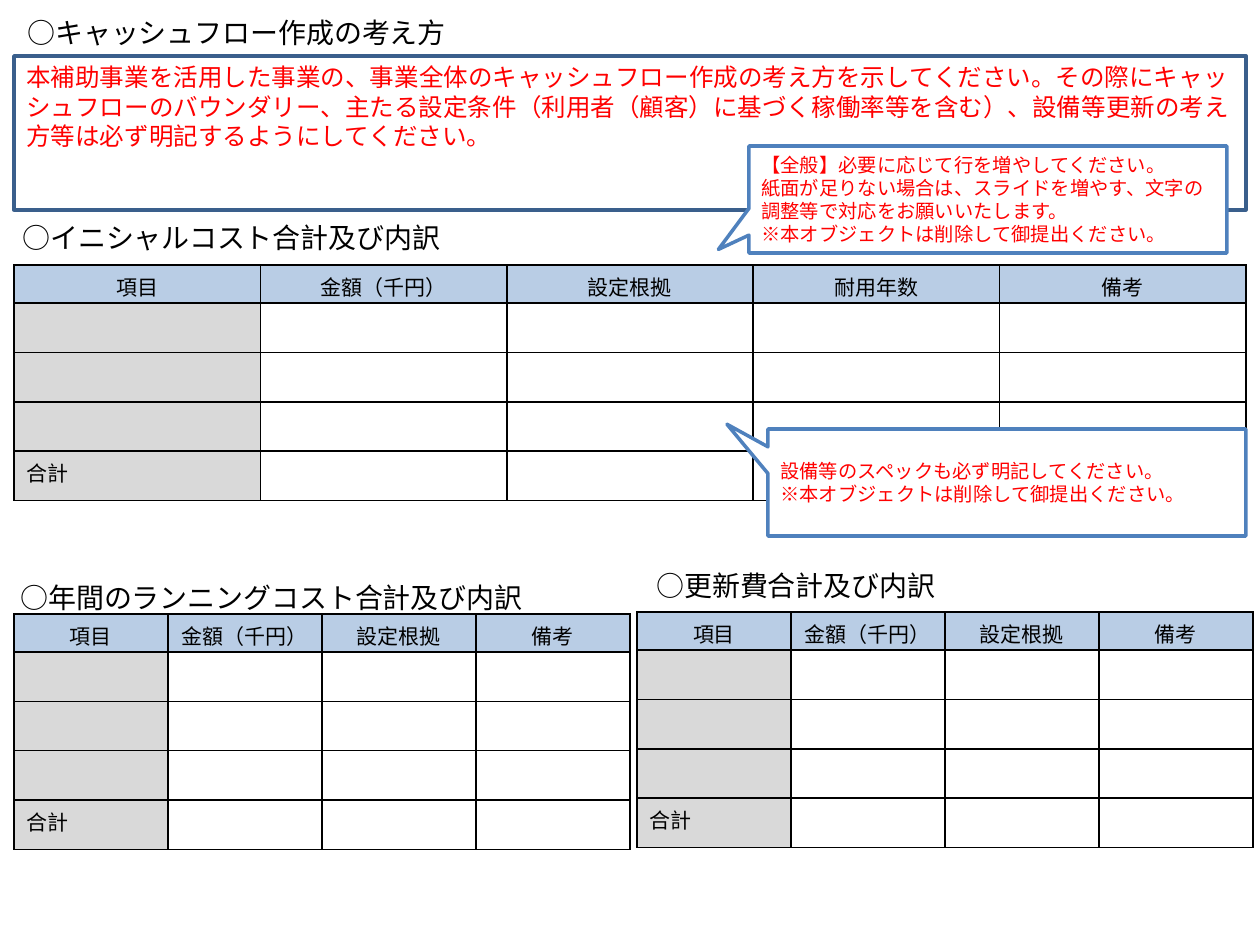
import pptx
import pptx.util
import pptx.dml.color
import pptx.enum.shapes
import pptx.enum.text
import pptx.oxml.ns
import lxml.etree

SCALE = 914400 // 126
CJK = "Noto Sans CJK JP"
BLACK, RED, WHITE = "000000", "FF0000", "FFFFFF"
HEADER_FILL, ITEM_FILL = "B9CDE5", "D9D9D9"
SHAPES = pptx.enum.shapes.MSO_SHAPE
ANCHOR = pptx.enum.text.MSO_ANCHOR
ALIGN = pptx.enum.text.PP_ALIGN


def px(value):
    return pptx.util.Emu(round(value * 914400 / 126))


def colour(value):
    return pptx.dml.color.RGBColor.from_string(value)


def child(parent, tag, **attributes):
    return lxml.etree.SubElement(parent, pptx.oxml.ns.qn(tag), **attributes)


def write(para, text, size, ink, font=CJK, align=ALIGN.LEFT):
    para.alignment = align
    span = para.add_run()
    span.text = text
    span.font.size = pptx.util.Pt(size)
    span.font.name = font
    span.font.color.rgb = colour(ink)
    child(span.font._element, "a:ea", typeface=CJK)


def write_lines(frame, lines, size, ink):
    for index, line in enumerate(lines):
        para = frame.add_paragraph() if index else frame.paragraphs[0]
        write(para, line, size, ink)


def add_heading(page, left, top, width, text):
    box = page.shapes.add_textbox(px(left), px(top), px(width), px(47))
    box.text_frame.word_wrap = True
    write_lines(box.text_frame, [text], 16, BLACK)


def add_note(page, kind, place, lines, size, line, fill=None, anchor=ANCHOR.TOP, tip=()):
    note = page.shapes.add_shape(kind, *map(px, place))
    note.shadow.inherit = False
    if fill:
        note.fill.solid()
        note.fill.fore_color.rgb = colour(fill)
    else:
        note.fill.background()
    note.line.color.rgb = colour(line)
    note.line.width = pptx.util.Pt(2)
    for index, value in enumerate(tip):
        note.adjustments[index] = value
    note.text_frame.word_wrap = True
    note.text_frame.vertical_anchor = anchor
    write_lines(note.text_frame, lines, size, RED)


def style_cell(cell, fill):
    # Borders come before the fill in the cell properties
    properties = cell._tc.get_or_add_tcPr()
    for side in ("a:lnL", "a:lnR", "a:lnT", "a:lnB"):
        border = child(properties, side, w="12700")
        child(child(border, "a:solidFill"), "a:srgbClr", val=BLACK)
    if fill:
        cell.fill.solid()
        cell.fill.fore_color.rgb = colour(fill)
    else:
        cell.fill.background()


def add_cost_table(page, left, top, width, headers):
    body_rows, header_height, body_height = 4, 29, 198
    table = page.shapes.add_table(body_rows + 1, len(headers), px(left), px(top),
                                  px(width), px(header_height + body_height)).table
    table.first_row = table.horz_banding = False
    for column in table.columns:
        column.width = px(width / len(headers))
    for index, row in enumerate(table.rows):
        row.height = px(body_height / body_rows) if index else px(header_height)
        for number, cell in enumerate(row.cells):
            para = cell.text_frame.paragraphs[0]
            if index == 0:
                style_cell(cell, HEADER_FILL)
                write(para, headers[number], 12, BLACK, "Calibri", ALIGN.CENTER)
                continue
            style_cell(cell, None if number else ITEM_FILL)
            if index == body_rows and number == 0:
                write(para, "合計", 12, BLACK, "Calibri")
            else:
                child(para._p, "a:endParaRPr", sz="1200")


def main():
    deck = pptx.Presentation()
    deck.slide_width, deck.slide_height = px(1260), px(945)
    page = deck.slides.add_slide(deck.slide_layouts[6])
    removal = "※本オブジェクトは削除して御提出ください。"
    short_headers = ["項目", "金額（千円）", "設定根拠", "備考"]
    long_headers = short_headers[:3] + ["耐用年数"] + short_headers[3:]

    # Section headings
    add_heading(page, 15, 9, 578, "○キャッシュフロー作成の考え方")
    add_heading(page, 10, 214, 578, "○イニシャルコスト合計及び内訳")
    add_heading(page, 8, 574, 578, "○年間のランニングコスト合計及び内訳")
    add_heading(page, 644, 562, 360, "○更新費合計及び内訳")

    # Cash flow policy
    add_note(page, SHAPES.RECTANGLE, (14, 56, 1232, 154), [
        "本補助事業を活用した事業の、事業全体のキャッシュフロー作成の考え方を示してください。"
        "その際にキャッシュフローのバウンダリー、主たる設定条件（利用者（顧客）に基づく"
        "稼働率等を含む）、設備等更新の考え方等は必ず明記するようにしてください。"],
        14, "3A5F8C")

    # Cost tables
    add_cost_table(page, 14, 265, 1232, long_headers)
    add_cost_table(page, 14, 614, 616, short_headers)
    add_cost_table(page, 637, 612, 616, short_headers)

    # Guidance callouts
    callouts = [
        ((768, 429, 478, 107), (-0.586, -0.545),
         ["設備等のスペックも必ず明記してください。", removal]),
        ((749, 146, 478, 107), (-0.564, 0.467),
         ["【全般】必要に応じて行を増やしてください。",
          "紙面が足りない場合は、スライドを増やす、文字の調整等で対応をお願いいたします。",
          removal]),
    ]
    for place, tip, lines in callouts:
        add_note(page, SHAPES.RECTANGULAR_CALLOUT, place, lines, 11, "4F81BD",
                 WHITE, ANCHOR.MIDDLE, tip)

    deck.save("out.pptx")


main()
